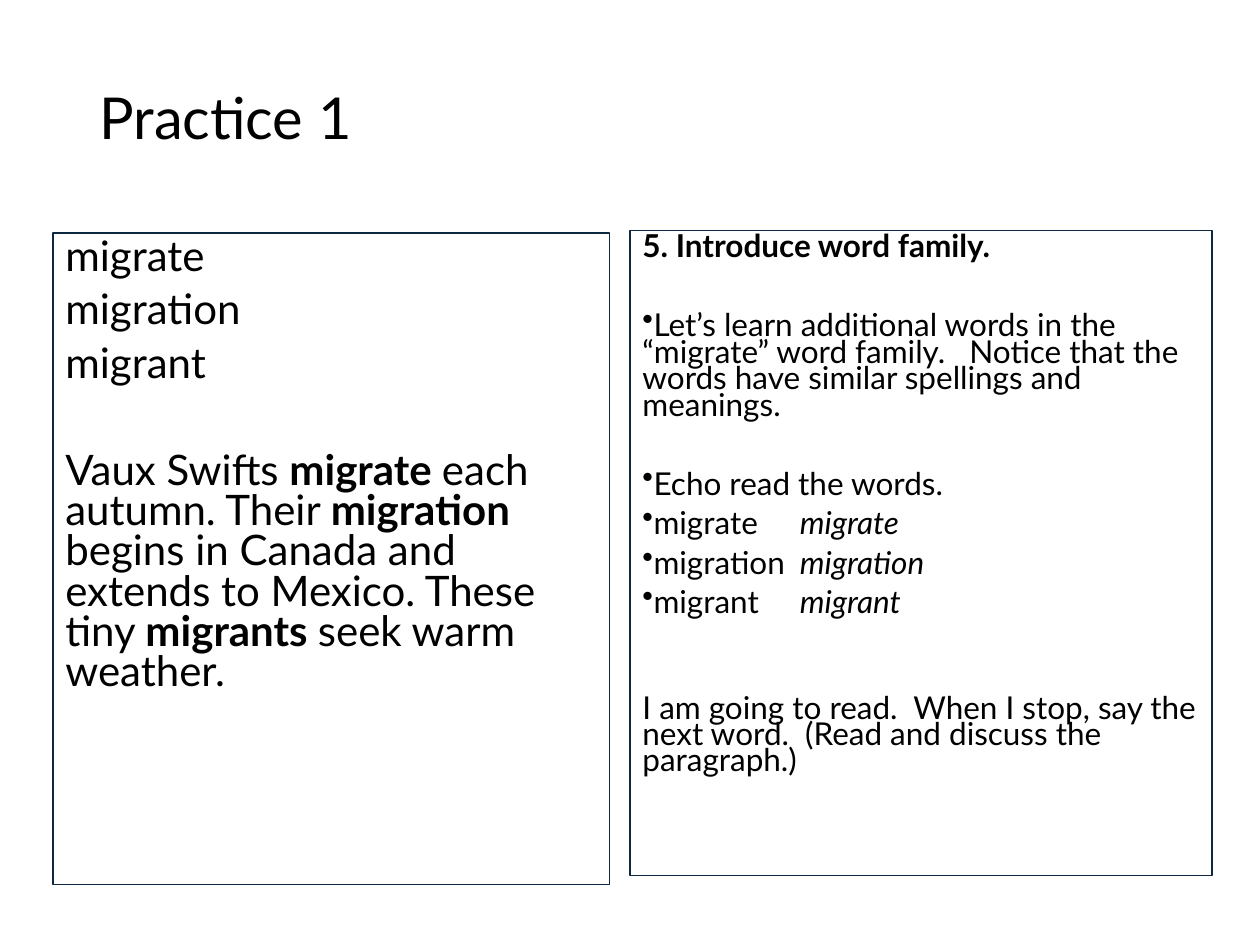
from dataclasses import dataclass

from lxml.etree import SubElement
from pptx import Presentation
from pptx.dml.color import RGBColor
from pptx.enum.text import MSO_ANCHOR
from pptx.oxml.ns import qn
from pptx.slide import Slide
from pptx.text.text import TextFrame
from pptx.util import Inches, Pt


@dataclass
class Line:
    """A paragraph, with marked runs between asterisks."""
    text: str
    gap: float = 7.5
    mark: str = "bold"
    bullet: bool = False
    tab: float = 0


@dataclass
class Panel:
    """A framed box of lines."""
    left: float
    top: float
    width: float
    height: float
    size: float
    pitch: float
    lines: list[Line]


PANELS = [
    Panel(5, 1.83, 4.62, 5.12, 18, 0.7, [
        Line("*5. Introduce word family.*", gap=0),
        Line("Let’s learn additional words in the “migrate” word family.   "
             "Notice that the words have similar spellings and meanings.",
             gap=30, bullet=True),
        Line("Echo read the words.", gap=30, bullet=True),
        *[Line(f"{word}\t*{word}*", mark="italic", bullet=True, tab=1.25)
          for word in ("migrate", "migration", "migrant")],
        Line("I am going to read.  When I stop, say the next word.  "
             "(Read and discuss the paragraph.)", gap=45),
    ]),
    Panel(0.42, 1.85, 4.42, 5.17, 24, 0.8, [
        Line("migrate", gap=0),
        Line("migration"),
        Line("migrant"),
        Line("Vaux Swifts *migrate *each autumn. Their *migration* begins in "
             "Canada and extends to Mexico. These tiny *migrants *seek warm "
             "weather.", gap=38),
    ]),
]


def paint(code: str) -> RGBColor:
    """Turn a hex string into a colour."""
    return RGBColor.from_string(code)


def add_box(slide: Slide, left: float, top: float, width: float,
            height: float, edge: str = "") -> TextFrame:
    """Add a wrapped text box, framed when an edge colour is given."""
    box = slide.shapes.add_textbox(
        Inches(left), Inches(top), Inches(width), Inches(height))
    if edge:
        box.line.color.rgb = paint(edge)
        box.line.width = Pt(0.75)
    box.text_frame.word_wrap = True
    return box.text_frame


def write(frame: TextFrame, text: str, *, size: float, pitch: float,
          gap: float = 0, mark: str = "bold", bullet: bool = False,
          tab: float = 0, color: str = "000000", face: str = "Lato") -> None:
    """Write one paragraph, using the empty first one if it is free."""
    first = frame.paragraphs[0]
    para = frame.add_paragraph() if first.runs else first
    props = para._p.get_or_add_pPr()
    if bullet:
        SubElement(props, qn("a:buChar"), char="•")
    if tab:
        stops = SubElement(props, qn("a:tabLst"))
        SubElement(stops, qn("a:tab"), pos=str(Inches(tab)), algn="l")
    para.line_spacing = pitch
    para.space_before = Pt(gap)
    for spot, part in enumerate(text.split("*")):
        if part:
            run = para.add_run()
            run.text = part
            run.font.name = face
            run.font.size = Pt(size)
            run.font.color.rgb = paint(color)
            if spot % 2:
                setattr(run.font, mark, True)


def draw(slide: Slide, panel: Panel) -> None:
    """Draw a framed panel with its lines."""
    frame = add_box(slide, panel.left, panel.top, panel.width, panel.height,
                    edge="0E2841")
    for line in panel.lines:
        write(frame, line.text, size=panel.size, pitch=panel.pitch,
              gap=line.gap, mark=line.mark, bullet=line.bullet, tab=line.tab)


def main() -> None:
    """Build and save the slide."""
    deck = Presentation()
    deck.slide_width, deck.slide_height = Inches(10), Inches(7.5)
    slide = deck.slides.add_slide(deck.slide_layouts[6])
    title = add_box(slide, 0.69, 0.4, 8.62, 1.12)
    title.vertical_anchor = MSO_ANCHOR.MIDDLE
    write(title, "Practice 1", size=33, pitch=0.9)
    for panel in PANELS:
        draw(slide, panel)
    deck.save("out.pptx")


if __name__ == "__main__":
    main()
